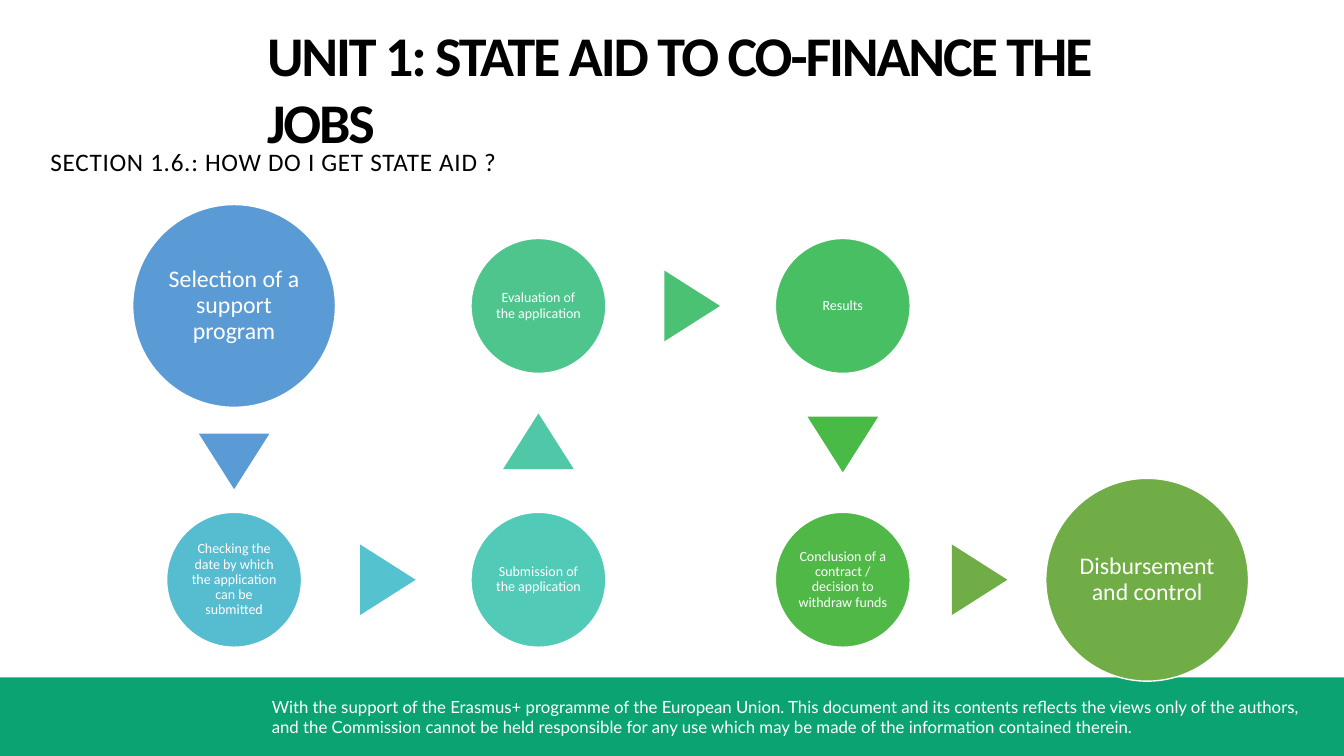
from dataclasses import dataclass
from itertools import pairwise

import pptx
import pptx.dml.color
import pptx.enum.shapes
import pptx.enum.text
import pptx.oxml.ns
import pptx.slide
import pptx.util
from pptx.dml.color import RGBColor
from pptx.enum.shapes import MSO_SHAPE
from pptx.enum.text import MSO_ANCHOR, MSO_AUTO_SIZE, PP_ALIGN
from pptx.util import Cm, Pt

WHITE = RGBColor(0xFF, 0xFF, 0xFF)
BLACK = RGBColor(0x00, 0x00, 0x00)
BAND_GREEN = RGBColor(0x0C, 0xA3, 0x73)
BLUE = RGBColor(0x5B, 0x9B, 0xD5)
SKY = RGBColor(0x56, 0xBC, 0xD0)
CYAN = RGBColor(0x55, 0xC3, 0xCF)
TURQUOISE = RGBColor(0x52, 0xCA, 0xB8)
AQUA = RGBColor(0x50, 0xC8, 0xA7)
MINT = RGBColor(0x4D, 0xC5, 0x8D)
EMERALD = RGBColor(0x4B, 0xC1, 0x74)
JADE = RGBColor(0x49, 0xBF, 0x64)
GRASS = RGBColor(0x4A, 0xBA, 0x46)
LEAF = RGBColor(0x50, 0xB8, 0x46)
OLIVE = RGBColor(0x70, 0xAD, 0x47)

SLIDE_WIDTH, SLIDE_HEIGHT = 33.87, 19.05
BAND_TOP = 17.07
FIRST_X, COLUMN_PITCH = 5.9, 7.67
ROW_Y = (7.71, 14.61)
LARGE, SMALL = 5.11, 3.4
ARROW_WIDTH, ARROW_HEIGHT = 1.78, 1.4
ARROW_NUDGE = 0.04


@dataclass(frozen=True)
class Step:
    text: str
    column: int
    row: int
    fill: RGBColor
    arrow_fill: RGBColor | None = None
    diameter: float = SMALL
    size: float = 10

    @property
    def x(self) -> float:
        return FIRST_X + self.column * COLUMN_PITCH

    @property
    def y(self) -> float:
        return ROW_Y[self.row]


STEPS = (
    Step("Selection of a support program", 0, 0, BLUE, BLUE, LARGE, 17),
    Step("Checking the date by which the application can be submitted", 0, 1, SKY, CYAN),
    Step("Submission of the application", 1, 1, TURQUOISE, AQUA),
    Step("Evaluation of the application", 1, 0, MINT, EMERALD),
    Step("Results", 2, 0, JADE, GRASS),
    Step("Conclusion of a contract / decision to withdraw funds", 2, 1, LEAF, OLIVE),
    Step("Disbursement and control", 3, 1, OLIVE, None, LARGE, 17),
)


def write(shape, text: str, *, size: float, color: RGBColor = WHITE, font: str = "Calibri",
          bold: bool = False, spacing: float = 0, align: PP_ALIGN = PP_ALIGN.LEFT,
          anchor: MSO_ANCHOR = MSO_ANCHOR.TOP, line_spacing: float = 1.0,
          margins: tuple = (0, 0.03, 0, 0),
          auto_size: MSO_AUTO_SIZE = MSO_AUTO_SIZE.NONE) -> None:
    frame = shape.text_frame
    frame.word_wrap = True
    frame.auto_size = auto_size
    frame.vertical_anchor = anchor
    frame.margin_left, frame.margin_top, frame.margin_right, frame.margin_bottom = map(Cm, margins)
    paragraph = frame.paragraphs[0]
    paragraph.alignment = align
    paragraph.line_spacing = line_spacing
    paragraph.space_before = Pt(0)
    run = paragraph.add_run()
    run.text = text
    run.font.name = font
    run.font.size = Pt(size)
    run.font.bold = bold
    run.font.color.rgb = color
    if spacing:
        run.font._element.set("spc", str(round(spacing * 100)))


def add_solid(slide: pptx.slide.Slide, kind: MSO_SHAPE, x: float, y: float,
              width: float, height: float, fill: RGBColor):
    solid = slide.shapes.add_shape(kind, Cm(x - width / 2), Cm(y - height / 2),
                                   Cm(width), Cm(height))
    solid.shadow.inherit = False
    solid.fill.solid()
    solid.fill.fore_color.rgb = fill
    solid.line.fill.background()
    return solid


def add_step(slide: pptx.slide.Slide, step: Step) -> None:
    circle = add_solid(slide, MSO_SHAPE.OVAL, step.x, step.y,
                       step.diameter, step.diameter, step.fill)
    circle.line.color.rgb = WHITE
    circle.line.width = Pt(1)
    inset = 0.003 * step.size
    write(circle, step.text, size=step.size, align=PP_ALIGN.CENTER,
          anchor=MSO_ANCHOR.MIDDLE, line_spacing=0.9, margins=(inset,) * 4)


def add_arrow(slide: pptx.slide.Slide, start: Step, end: Step) -> None:
    across = (end.x > start.x) - (end.x < start.x)
    down = (end.y > start.y) - (end.y < start.y)
    shift = (start.diameter - end.diameter) / 4 + ARROW_NUDGE
    arrow = add_solid(slide, MSO_SHAPE.ISOSCELES_TRIANGLE,
                      (start.x + end.x) / 2 + across * shift,
                      (start.y + end.y) / 2 + down * shift,
                      ARROW_WIDTH, ARROW_HEIGHT, start.arrow_fill)
    arrow.rotation = 90 if across else 90 + 90 * down


def main() -> None:
    deck = pptx.Presentation()
    deck.slide_width, deck.slide_height = Cm(SLIDE_WIDTH), Cm(SLIDE_HEIGHT)
    slide = deck.slides.add_slide(deck.slide_layouts[5])

    band_height = SLIDE_HEIGHT - BAND_TOP
    add_solid(slide, MSO_SHAPE.RECTANGLE, SLIDE_WIDTH / 2, BAND_TOP + band_height / 2,
              SLIDE_WIDTH, band_height, BAND_GREEN)
    disclaimer = slide.shapes.add_textbox(Cm(6.6), Cm(17.42), Cm(26.47), Cm(1.27))
    write(disclaimer,
          "With the support of the Erasmus+ programme of the European Union. "
          "This document and its contents reflects the views only of the authors, "
          "and the Commission cannot be held responsible for any use which may be made "
          "of the information contained therein.",
          size=12, font="Lato", margins=(0.25, 0.13, 0.25, 0.13),
          auto_size=MSO_AUTO_SIZE.SHAPE_TO_FIT_TEXT)

    for step in STEPS:
        add_step(slide, step)
    for start, end in pairwise(STEPS):
        add_arrow(slide, start, end)

    unit = slide.shapes.title
    unit.left, unit.top, unit.width, unit.height = Cm(6.73), Cm(0.48), Cm(22.81), Cm(1.75)
    write(unit, "UNIT 1: STATE AID TO CO-FINANCE THE JOBS",
          size=40, color=BLACK, bold=True, spacing=-1.5)
    section = slide.shapes.add_textbox(Cm(1.27), Cm(3.66), Cm(16.92), Cm(1.02))
    write(section, "SECTION 1.6.: HOW DO I GET STATE AID ?",
          size=18, color=BLACK, spacing=0.5)

    deck.save("out.pptx")


if __name__ == "__main__":
    main()
